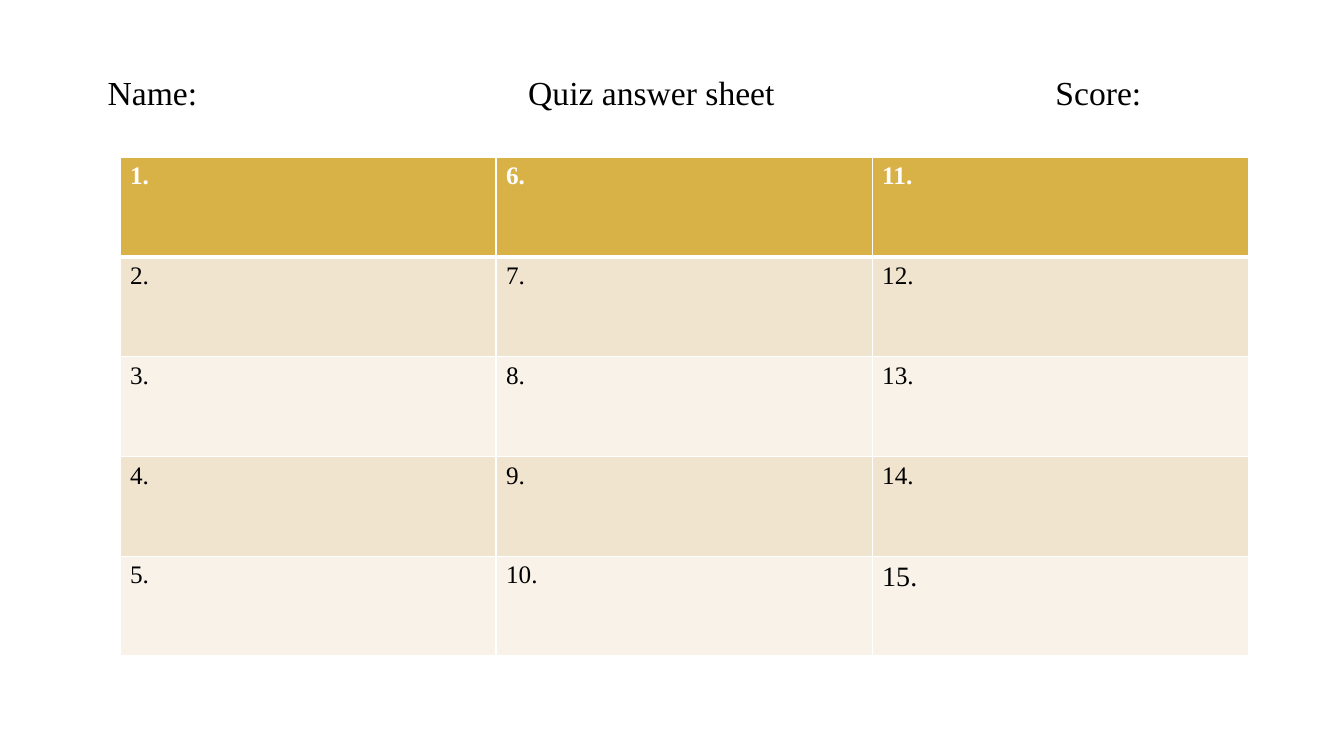
import dataclasses

import lxml.etree
import pptx
import pptx.dml.color
import pptx.enum.text
import pptx.oxml.ns
import pptx.slide
import pptx.table
import pptx.text.text
import pptx.util

FONT = "Times New Roman"
COLORS = {
    "ink": "000000",
    "white": "FFFFFF",
    "gold": "D9B247",
    "sand": "F1E4CF",
    "cream": "F8F2E9",
}
ROWS, COLS = 5, 3
COL_WIDTH, ROW_HEIGHT = 3.73, 0.99
THIN, THICK = 1, 3


@dataclasses.dataclass(frozen=True)
class Label:
    text: str
    left: float
    width: float


LABELS = (
    Label("Quiz answer sheet", 5.14, 3.51),
    Label("Name:", 0.97, 1.94),
    Label("Score:", 10.37, 1.22),
)


def tint(name: str) -> pptx.dml.color.RGBColor:
    return pptx.dml.color.RGBColor.from_string(COLORS[name])


def write(frame: pptx.text.text.TextFrame, text: str, *, size: int,
          color: str = "ink", bold: bool = False) -> None:
    run = frame.paragraphs[0].add_run()
    run.text = text
    run.font.name = FONT
    run.font.size = pptx.util.Pt(size)
    run.font.bold = bold
    run.font.color.rgb = tint(color)


def add_label(slide: pptx.slide.Slide, label: Label) -> None:
    box = slide.shapes.add_textbox(
        pptx.util.Inches(label.left), pptx.util.Inches(0.66),
        pptx.util.Inches(label.width), pptx.util.Inches(0.5))
    frame = box.text_frame
    frame.word_wrap = True
    frame.auto_size = pptx.enum.text.MSO_AUTO_SIZE.SHAPE_TO_FIT_TEXT
    write(frame, label.text, size=24)


def add_edge(cell: pptx.table._Cell, side: str, width: int) -> None:
    tag = pptx.oxml.ns.qn
    props = cell._tc.get_or_add_tcPr()
    line = lxml.etree.SubElement(props, tag(f"a:ln{side}"),
                                 w=str(pptx.util.Pt(width)))
    fill = lxml.etree.SubElement(line, tag("a:solidFill"))
    lxml.etree.SubElement(fill, tag("a:srgbClr"), val=COLORS["white"])


def fill_cell(cell: pptx.table._Cell, row: int, col: int) -> None:
    head = row == 0
    number = col * ROWS + row + 1
    edges = {"L": THIN, "R": THIN,
             "T": THICK if row == 1 else THIN,
             "B": THICK if head else THIN}
    for side, width in edges.items():
        add_edge(cell, side, width)
    cell.fill.solid()
    cell.fill.fore_color.rgb = tint(
        "gold" if head else "sand" if row % 2 else "cream")
    write(cell.text_frame, f"{number}.",
          size=20 if number == ROWS * COLS else 18,
          color="white" if head else "ink", bold=head)


def add_grid(slide: pptx.slide.Slide) -> None:
    table = slide.shapes.add_table(
        ROWS, COLS, pptx.util.Inches(1.19), pptx.util.Inches(1.56),
        pptx.util.Inches(COLS * COL_WIDTH),
        pptx.util.Inches(ROWS * ROW_HEIGHT)).table
    for line in table.columns:
        line.width = pptx.util.Inches(COL_WIDTH)
    for row, line in enumerate(table.rows):
        line.height = pptx.util.Inches(ROW_HEIGHT)
        for col, cell in enumerate(line.cells):
            fill_cell(cell, row, col)


def main() -> None:
    deck = pptx.Presentation()
    deck.slide_width = pptx.util.Inches(13.33)
    deck.slide_height = pptx.util.Inches(7.5)
    slide = deck.slides.add_slide(deck.slide_layouts[6])
    for label in LABELS:
        add_label(slide, label)
    add_grid(slide)
    deck.save("out.pptx")


if __name__ == "__main__":
    main()
